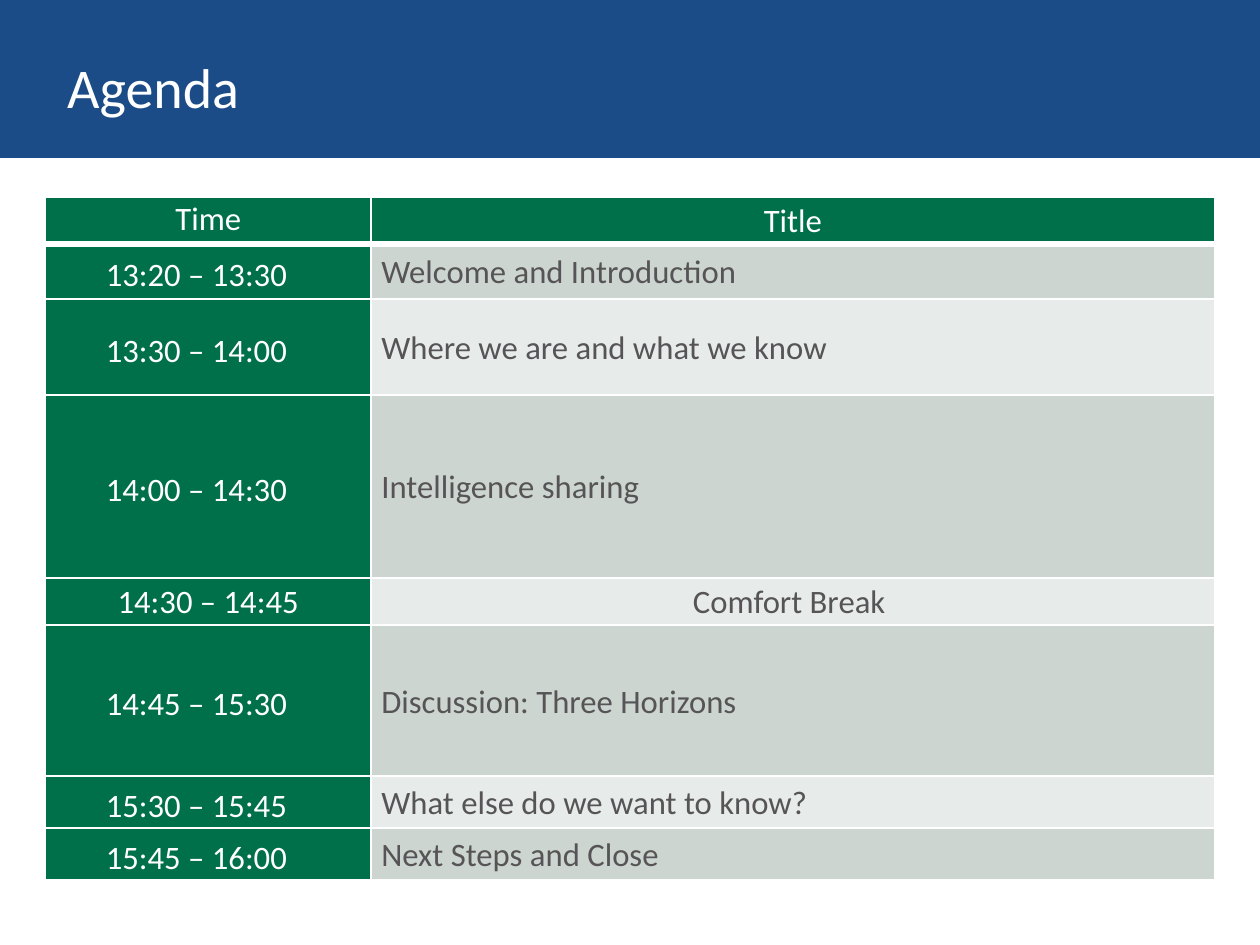
from lxml import etree
from pptx import Presentation
from pptx.dml.color import RGBColor
from pptx.enum.shapes import MSO_SHAPE
from pptx.enum.text import MSO_ANCHOR, PP_ALIGN
from pptx.oxml.ns import qn
from pptx.util import Inches, Pt

RECTANGLE = MSO_SHAPE.RECTANGLE
TOP, MIDDLE = MSO_ANCHOR.TOP, MSO_ANCHOR.MIDDLE
LEFT, CENTER = PP_ALIGN.LEFT, PP_ALIGN.CENTER

FONT = "Calibri"
COLORS = {
    "white": "FFFFFF",
    "band": "1B4C87",
    "green": "00704A",
    "text": "565456",
    "dark row": "CCD5D0",
    "light row": "E7EBE9",
}

# Slide in the 4:3 format
SLIDE_WIDTH = Inches(7.5)
SLIDE_HEIGHT = SLIDE_WIDTH * 3 // 4

# Time, title and row height in inches
AGENDA = [
    ("Time", "Title", 0.28),
    ("13:20 – 13:30", "Welcome and Introduction", 0.33),
    ("13:30 – 14:00", "Where we are and what we know", 0.57),
    ("14:00 – 14:30", "Intelligence sharing", 1.09),
    ("14:30 – 14:45", "Comfort Break ", 0.28),
    ("14:45 – 15:30", "Discussion: Three Horizons", 0.9),
    ("15:30 – 15:45", "What else do we want to know?", 0.31),
    ("15:45 – 16:00", "Next Steps and Close", 0.31),
]
COLUMN_WIDTHS = (1.94, 5.02)
HEADER_ROW, BREAK_ROW = 0, 4

# Border widths in points
BORDERS = {"lnL": 1, "lnR": 1, "lnT": 1, "lnB": 1}
HEADER_BORDERS = {**BORDERS, "lnB": 3}

CELL_FORMAT = {
    "margin_left": Inches(0.06),
    "margin_right": Inches(0.06),
    "margin_top": 0,
    "margin_bottom": 0,
}
PLAIN_FORMAT = {"alignment": LEFT, "line_spacing": 1.07}
CENTERED_FORMAT = {"alignment": CENTER, "line_spacing": 1.07}
TIME_FORMAT = {"alignment": LEFT, "line_spacing": 1.2, "space_before": Pt(2.4)}
TIME_INDENT = {"marL": Inches(0.5), "indent": Inches(-0.2)}


def color(name):
    return RGBColor.from_string(COLORS[name])


def apply_format(target, values):
    for name, value in values.items():
        setattr(target, name, value)


def set_font(font, size, color_name):
    apply_format(font, {"name": FONT, "size": Pt(size), "bold": False})
    font.color.rgb = color(color_name)


def add_borders(cell, color_name, borders):
    properties = cell._tc.get_or_add_tcPr()
    for position, (side, width) in enumerate(borders.items()):
        line = etree.Element(qn(f"a:{side}"), w=str(Pt(width)))
        fill = etree.SubElement(line, qn("a:solidFill"))
        etree.SubElement(fill, qn("a:srgbClr"), val=COLORS[color_name])
        properties.insert(position, line)


def add_title_band(slide, left, top, width, height):
    # Coloured band, placed behind the title
    band = slide.shapes.add_shape(RECTANGLE, left, top, width, height)
    band.shadow.inherit = False
    band.fill.solid()
    band.fill.fore_color.rgb = color("band")
    band.line.fill.background()
    slide.shapes._spTree.insert(2, band._element)

    # Title
    title = slide.shapes.title
    apply_format(title, {
        "left": left + Inches(0.4), "top": top + Inches(0.33),
        "width": Inches(6.96), "height": Inches(0.37),
    })
    frame = title.text_frame
    apply_format(frame, {
        "margin_left": 0, "margin_right": 0, "margin_top": 0,
        "margin_bottom": 0, "vertical_anchor": MIDDLE,
    })
    frame.text = "Agenda"
    paragraph = frame.paragraphs[0]
    paragraph.alignment = LEFT
    set_font(paragraph.runs[0].font, 24, "white")


def fill_cell(cell, text, fill_name, text_color, paragraph_format, anchor, borders):
    cell.text = text
    apply_format(cell, CELL_FORMAT)
    cell.vertical_anchor = anchor
    cell.fill.solid()
    cell.fill.fore_color.rgb = color(fill_name)
    add_borders(cell, "white", borders)
    paragraph = cell.text_frame.paragraphs[0]
    apply_format(paragraph, paragraph_format)
    if paragraph_format is TIME_FORMAT:
        properties = paragraph._p.get_or_add_pPr()
        for name, value in TIME_INDENT.items():
            properties.set(name, str(value))
    set_font(paragraph.runs[0].font, 14, text_color)


def add_agenda_table(slide, left, top, width, height):
    frame = slide.shapes.add_table(
        len(AGENDA), len(COLUMN_WIDTHS), left, top, width, height)
    table = frame.table
    for column, column_width in zip(table.columns, COLUMN_WIDTHS):
        column.width = Inches(column_width)

    for index, (time, title, row_height) in enumerate(AGENDA):
        table.rows[index].height = Inches(row_height)
        is_header = index == HEADER_ROW
        centered = index in (HEADER_ROW, BREAK_ROW)
        borders = HEADER_BORDERS if is_header else BORDERS

        # Time column
        fill_cell(table.cell(index, 0), time, "green", "white",
                  CENTERED_FORMAT if centered else TIME_FORMAT,
                  TOP if is_header else MIDDLE, borders)

        # Title column, with alternating rows below the header
        row_fill = "dark row" if index % 2 else "light row"
        fill_cell(table.cell(index, 1), title,
                  "green" if is_header else row_fill,
                  "white" if is_header else "text",
                  CENTERED_FORMAT if centered else PLAIN_FORMAT,
                  MIDDLE, borders)


def main():
    presentation = Presentation()
    presentation.slide_width = SLIDE_WIDTH
    presentation.slide_height = SLIDE_HEIGHT
    slide = presentation.slides.add_slide(presentation.slide_layouts[5])
    add_title_band(slide, 0, 0, SLIDE_WIDTH, Inches(0.94))
    add_agenda_table(slide, Inches(0.27), Inches(1.17), Inches(6.96), Inches(4.07))
    presentation.save("out.pptx")


if __name__ == "__main__":
    main()
